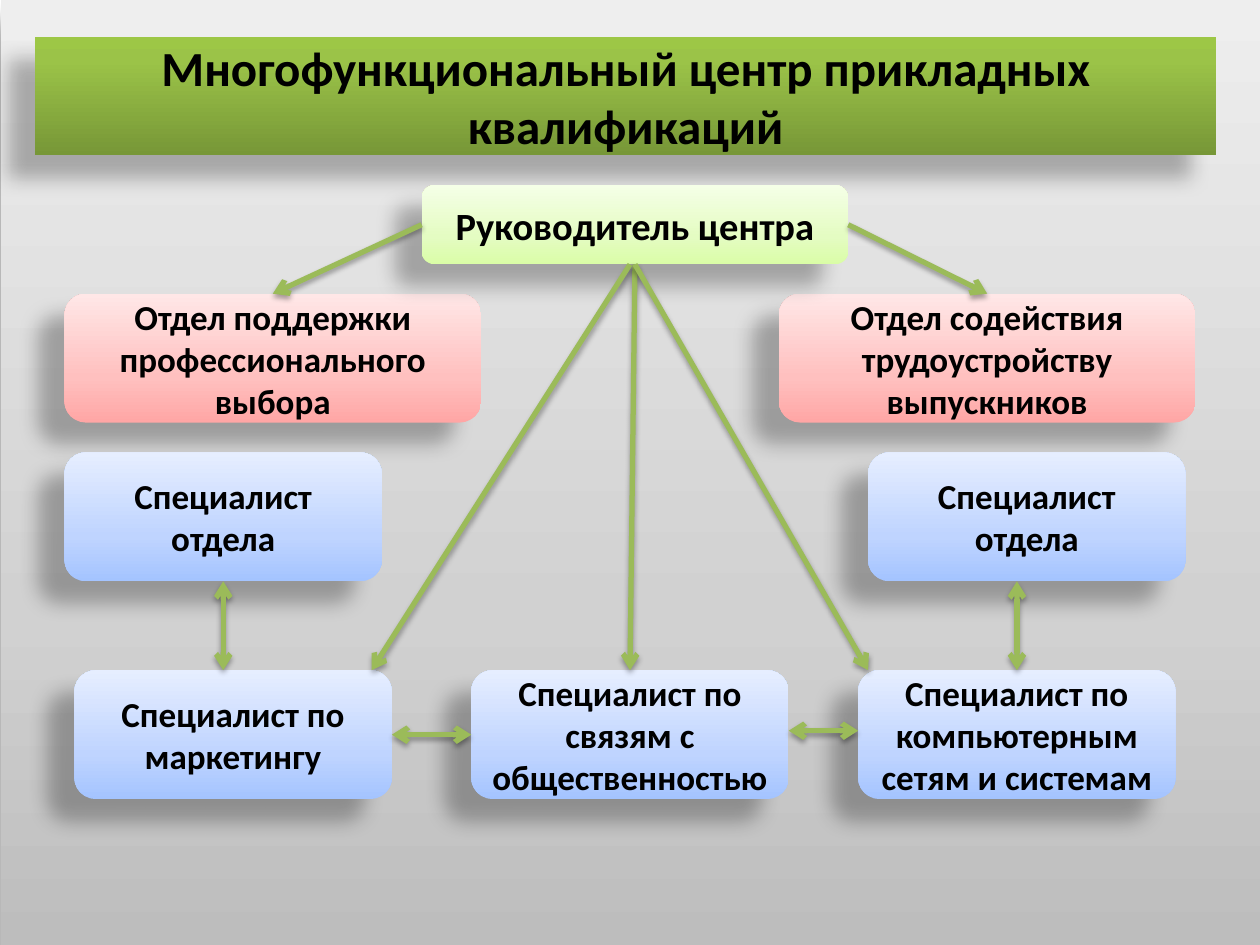
from lxml import etree
from pptx import Presentation
from pptx import util as u
from pptx.dml.color import RGBColor
from pptx.enum import shapes, text
from pptx.oxml import parse_xml
from pptx.oxml.ns import nsdecls, qn

INK = {"text": "000000", "arrow": "9BBB59", "shadow": "000000"}
# Gradient stops run from the bottom edge to the top edge
FILL = {
    "page": {0: "BDBDBD", 35: "D1D1D1", 100: "EEEEEE"},
    "title": {0: "779737", 80: "9BC348", 100: "9DC746"},
    "lead": {0: "DAFDA7", 35: "E4FCC2", 100: "F5FFE7"},
    "dept": {0: "FFA6A5", 35: "FFC0BF", 100: "FFE7E7"},
    "staff": {0: "A4C4FF", 35: "BFD4FF", 100: "E6EEFF"},
}

prs = Presentation()
prs.slide_width, prs.slide_height = u.Cm(25.4), u.Cm(19.05)
slide = prs.slides.add_slide(prs.slide_layouts[5])
tree = slide.shapes


def shade(props, blur, dist, angle, alpha):
    """Append an outer shadow; lengths in points, angle in degrees."""
    props.append(parse_xml(
        f'<a:effectLst {nsdecls("a")}><a:outerShdw blurRad="{u.Pt(blur)}" dist="{u.Pt(dist)}" '
        f'dir="{angle * 60000}" rotWithShape="0"><a:srgbClr val="{INK["shadow"]}">'
        f'<a:alpha val="{alpha * 1000}"/></a:srgbClr></a:outerShdw></a:effectLst>'))


def dress(shape, kind, words="", size=20):
    """Give a shape its gradient, shadow and centred bold text."""
    shape.line.fill.background()
    props = shape._element.spPr
    stops = "".join(f'<a:gs pos="{pos * 1000}"><a:srgbClr val="{tint}"/></a:gs>'
                    for pos, tint in FILL[kind].items())
    props.find(qn("a:ln")).addprevious(parse_xml(
        f'<a:gradFill {nsdecls("a")} rotWithShape="1"><a:gsLst>{stops}</a:gsLst>'
        '<a:lin ang="16200000" scaled="0"/></a:gradFill>'))
    shade(props, 11.8, 19.7, 141, 28)
    if words:
        frame = shape.text_frame
        frame.word_wrap = True
        frame.auto_size = text.MSO_AUTO_SIZE.NONE
        frame.vertical_anchor = text.MSO_ANCHOR.MIDDLE
        para = frame.paragraphs[0]
        para.alignment = text.PP_ALIGN.CENTER
        run = para.add_run()
        run.text = words
        run.font.name, run.font.size, run.font.bold = "Calibri", u.Pt(size), True
        run.font.color.rgb = RGBColor.from_string(INK["text"])


# Backdrop, placed behind the title
page = tree.add_shape(shapes.MSO_SHAPE.RECTANGLE, u.Cm(0.02), 0, u.Cm(25.38), u.Cm(19.05))
dress(page, "page")
tree.title._element.addprevious(page._element)

# Title as a pill
title = tree.title
title.left, title.top = u.Cm(0.71), u.Cm(0.74)
title.width, title.height = u.Cm(23.8), u.Cm(2.39)
title._element.spPr.find(qn("a:xfrm")).addnext(parse_xml(
    f'<a:prstGeom {nsdecls("a")} prst="roundRect"><a:avLst>'
    '<a:gd name="adj" fmla="val 50000"/></a:avLst></a:prstGeom>'))
dress(title, "title", "Многофункциональный центр прикладных квалификаций", 28)

# Boxes: name, kind, left, top, words
size = {"lead": (8.6, 1.6, 22), "dept": (8.4, 2.6, 20), "staff": (6.4, 2.6, 20)}
row = {"lead": 3.73, "dept": 5.92, "mid": 9.12, "low": 13.51}
box = {}
for name, kind, left, top, words in [
    ("choice", "dept", 1.3, row["dept"], "Отдел поддержки профессионального выбора"),
    ("jobs", "dept", 15.7, row["dept"], "Отдел содействия трудоустройству выпускников"),
    ("west", "staff", 1.3, row["mid"], "Специалист отдела"),
    ("market", "staff", 1.5, row["low"], "Специалист по маркетингу"),
    ("public", "staff", 9.5, row["low"], "Специалист по связям с общественностью"),
    ("network", "staff", 17.3, row["low"], "Специалист по компьютерным сетям и системам"),
    ("east", "staff", 17.5, row["mid"], "Специалист отдела"),
    ("lead", "lead", 8.5, row["lead"], "Руководитель центра"),
]:
    wide, high, points = size[kind]
    box[name] = tree.add_shape(shapes.MSO_SHAPE.ROUNDED_RECTANGLE,
                               u.Cm(left), u.Cm(top), u.Cm(wide), u.Cm(high))
    dress(box[name], kind, words, points)

# Arrows: each end is a box side (name, site) or a free point (x, y)
one, both = ["tailEnd"], ["headEnd", "tailEnd"]
for start, end, heads in [
    (("lead", 2), ("public", 0), one),
    ((12.7, 5.33), (7.49, row["low"]), one),
    (("lead", 2), (17.5, row["low"]), one),
    (("market", 3), ("public", 1), both),
    ((15.9, 14.73), (17.3, 14.73), both),
    (("lead", 3), ("jobs", 0), one),
    (("lead", 1), ("choice", 0), one),
    (("network", 0), (20.5, 11.72), both),
    ((4.5, row["low"]), ("west", 2), both),
]:
    spots = [0 if p[0] in box else u.Cm(v) for p in (start, end) for v in p]
    link = tree.add_connector(shapes.MSO_CONNECTOR.STRAIGHT, *spots)
    if start[0] in box:
        link.begin_connect(box[start[0]], start[1])
    if end[0] in box:
        link.end_connect(box[end[0]], end[1])
    link.line.width = u.Pt(3)
    link.line.color.rgb = RGBColor.from_string(INK["arrow"])
    props = link._element.spPr
    for head in heads:
        etree.SubElement(props.find(qn("a:ln")), qn("a:" + head), type="arrow")
    shade(props, 3.1, 1.8, 90, 35)

prs.save("out.pptx")
